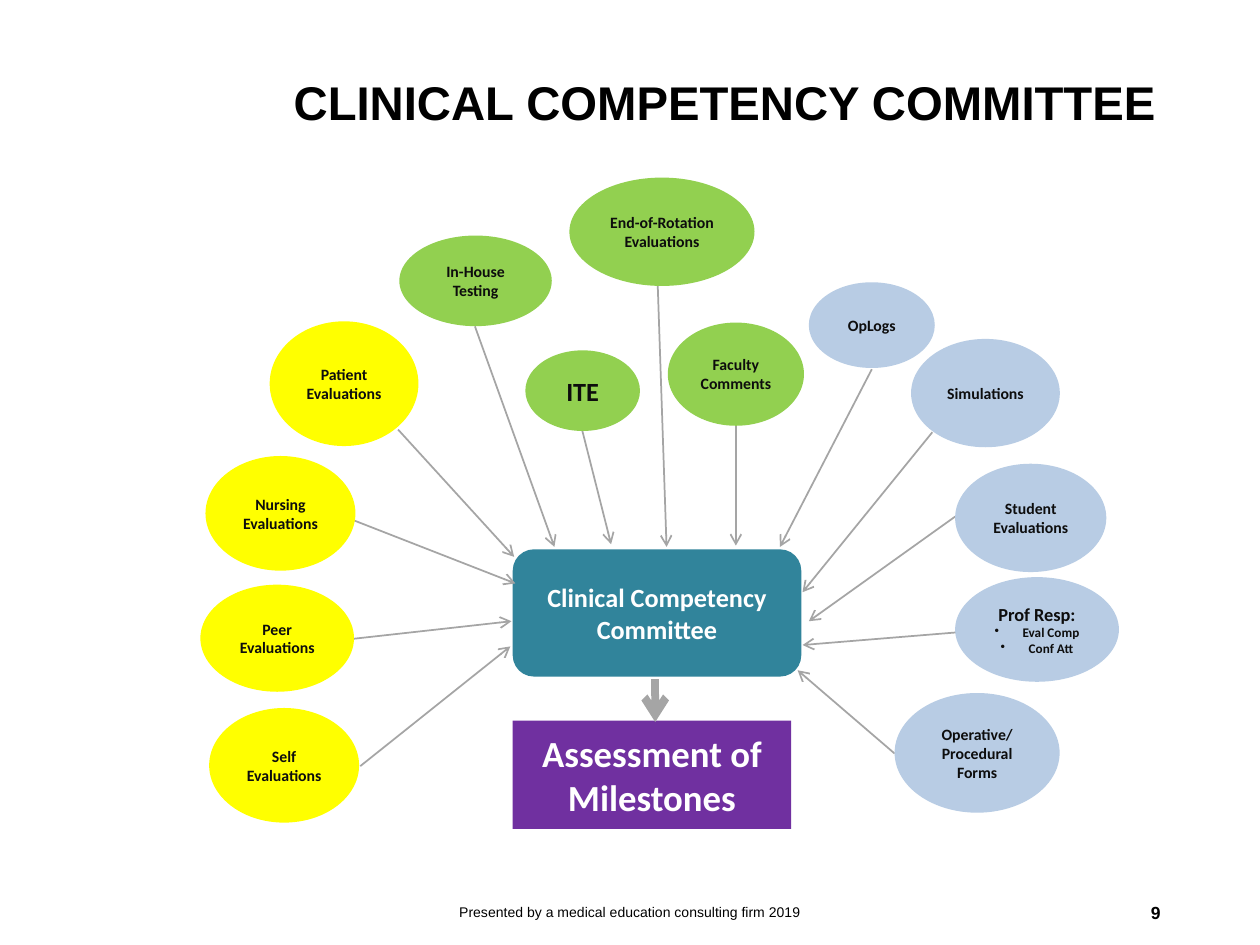
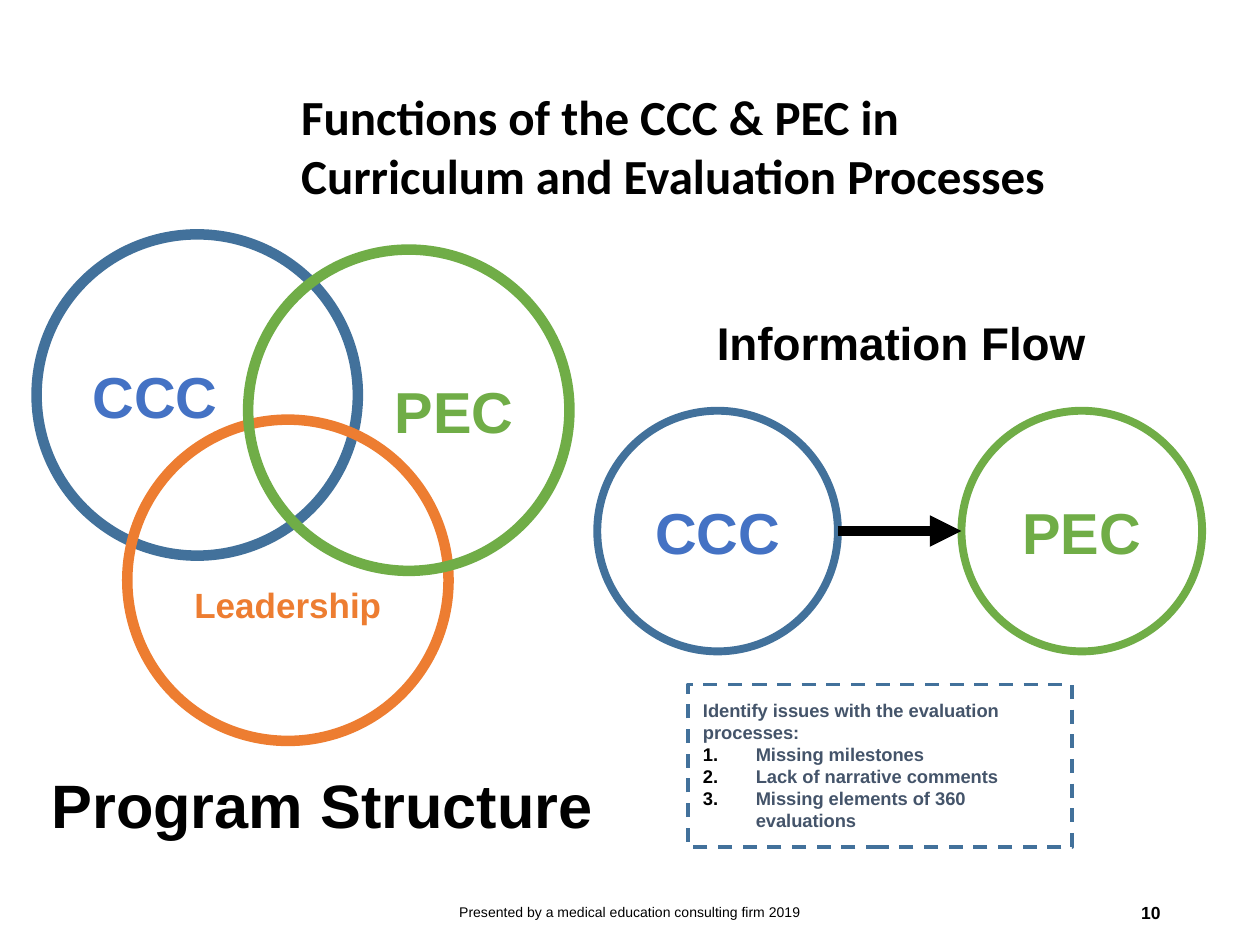
from lxml.etree import SubElement
from pptx import Presentation
from pptx.dml.color import RGBColor
from pptx.enum.dml import MSO_LINE
from pptx.enum.shapes import MSO_CONNECTOR, MSO_SHAPE as SHAPE
from pptx.enum.text import MSO_ANCHOR as ANCHOR, MSO_AUTO_SIZE, PP_ALIGN as ALIGN
from pptx.oxml.ns import qn
from pptx.util import Pt

BLACK, WHITE, INK, GRAY = "000000", "FFFFFF", "0D0D0D", "A5A5A5"
YELLOW, LIME, PALE_BLUE = "FFFF00", "92D050", "B8CCE4"
TEAL, PURPLE = "31849B", "7030A0"
STEEL, BLUE, GREEN, ORANGE, SLATE = "42719B", "4472C4", "70AD47", "ED7D31", "44546A"
FOOTER = "Presented by a medical education consulting firm 2019"
SHAPE_INSETS = (5, 3, 5, 3)
HEADING_INSETS = (5, 5, 5, 5)
TEXT_INSETS = (7.2, 3.6, 7.2, 3.6)


def rgb(color):
    """Turn a hex string into a colour."""
    return RGBColor.from_string(color)


def pts(*values):
    """Turn numbers into lengths in points."""
    return [Pt(round(v, 2)) for v in values]


def write(sp, text, size, color=BLACK, font="Arial", bold=True, align=ALIGN.CENTER,
          anchor=ANCHOR.MIDDLE, insets=SHAPE_INSETS, spacing=None):
    """Fill a shape with evenly formatted paragraphs."""
    tf = sp.text_frame
    tf.text = text
    tf.word_wrap = True
    tf.auto_size = MSO_AUTO_SIZE.NONE
    tf.vertical_anchor = anchor
    tf.margin_left, tf.margin_top, tf.margin_right, tf.margin_bottom = pts(*insets)
    for p in tf.paragraphs:
        p.alignment = align
        if spacing:
            p.line_spacing = spacing
        for r in p.runs:
            r.font.name, r.font.size, r.font.bold = font, Pt(size), bold
            r.font.color.rgb = rgb(color)
    return tf


def add_list_mark(p, margin, indent, tag, color=None, **attrs):
    """Give a paragraph a hanging bullet or number."""
    pPr = p._p.get_or_add_pPr()
    pPr.set("marL", str(Pt(margin)))
    pPr.set("indent", str(Pt(indent)))
    if color:
        SubElement(SubElement(pPr, qn("a:buClr")), qn("a:srgbClr"), val=color)
    SubElement(pPr, qn("a:" + tag), **attrs)


def add_figure(slide, kind, box, fill=None, line=None, width=1):
    """Add a flat preset shape."""
    sp = slide.shapes.add_shape(kind, *pts(*box))
    sp.shadow.inherit = False
    if fill:
        sp.fill.solid()
        sp.fill.fore_color.rgb = rgb(fill)
    else:
        sp.fill.background()
    if line:
        sp.line.color.rgb = rgb(line)
        sp.line.width = Pt(width)
    else:
        sp.line.fill.background()
    return sp


def add_arrow(slide, start, end, color=GRAY, width=1, head="arrow"):
    """Add a straight line with an arrowhead at its end."""
    c = slide.shapes.add_connector(MSO_CONNECTOR.STRAIGHT, *pts(*start, *end))
    c.line.color.rgb = rgb(color)
    c.line.width = Pt(width)
    SubElement(c.line._get_or_add_ln(), qn("a:tailEnd"), type=head)
    SubElement(c._element.spPr, qn("a:effectLst"))


def add_text(slide, box, text, size, **style):
    """Add a text box."""
    return write(slide.shapes.add_textbox(*pts(*box)), text, size, **style)


def add_page(prs, number, title, box, size, font, spacing=None):
    """Add a slide with its title, footer and number."""
    slide = prs.slides.add_slide(prs.slide_layouts[5])
    sp = slide.shapes.title
    sp.left, sp.top, sp.width, sp.height = pts(*box)
    write(sp, title, size, font=font, align=ALIGN.LEFT, anchor=ANCHOR.TOP,
          insets=TEXT_INSETS, spacing=spacing)
    add_text(slide, (238.3, 506.9, 243.4, 28.8), FOOTER, 8, bold=False, insets=TEXT_INSETS)
    add_text(slide, (508.3, 506.9, 162, 28.8), str(number), 10, align=ALIGN.RIGHT,
             insets=TEXT_INSETS)
    return slide


def draw_committee(slide, left, top):
    """Draw the evaluation sources feeding the committee and its result."""
    sources = [
        ("Patient Evaluations", YELLOW, (40.1, 82.6, 85, 71.3), (113.5, 144.5), (179.8, 217.2)),
        ("Nursing Evaluations", YELLOW, (3.4, 159.6, 85.7, 65.5), (88.3, 196.4), (180.5, 232.4)),
        ("Peer Evaluations", YELLOW, (0.5, 233.1, 87.8, 61.2), (88.3, 264), (178.3, 254)),
        ("Self\nEvaluations", YELLOW, (5.5, 303.6, 85.7, 65.5), (91.9, 336.8), (177.6, 268.4)),
        ("In-House\nTesting", LIME, (114.2, 33.6, 87.1, 51.8), (157.4, 85.5), (202.8, 211.5)),
        ("End-of-Rotation Evaluations", LIME, (211.4, 0.5, 105.8, 61.9), (261.8, 60.3),
         (266.9, 211.5)),
        ("ITE", LIME, (186.2, 99.2, 65.5, 46.1), (218.6, 144.5), (235.2, 210)),
        ("Faculty Comments", LIME, (267.6, 83.3, 77.8, 59), (306.5, 138), (306.5, 210.8)),
        ("OpLogs", PALE_BLUE, (348.2, 60.3, 72, 49), (384.2, 110), (331.7, 211.5)),
        ("Simulations", PALE_BLUE, (406.6, 92.7, 85, 61.9), (418.8, 146), (344.6, 237.4)),
        ("Student Evaluations", PALE_BLUE, (431.8, 164, 86.4, 61.9), (431.8, 194.2),
         (348.2, 254)),
        ("Prof Resp:\nEval Comp\nConf Att", PALE_BLUE, (431.8, 228.8, 93.6, 59.8),
         (432.5, 260.4), (344.6, 267.6)),
        ("Operative/\nProcedural\nForms", PALE_BLUE, (397.2, 295, 94.3, 68.4),
         (397.2, 329.6), (341.8, 282)),
    ]
    sizes = {"ITE": 15}

    def at(x, y, *size):
        return (left + x, top + y, *size)

    for kind, box, fill, text, size in [
        (SHAPE.ROUNDED_RECTANGLE, (179, 212.9, 164.9, 72.7), TEAL,
         "Clinical Competency Committee", 15),
        (SHAPE.RECTANGLE, (179, 310.8, 159.1, 61.9), PURPLE, "Assessment of Milestones", 21),
    ]:
        write(add_figure(slide, kind, at(*box), fill), text, size, WHITE, "Calibri")
    add_arrow(slide, at(260.4, 287.1), at(260.4, 311.6), width=4.5)
    for text, fill, box, start, end in sources:
        add_arrow(slide, at(*start), at(*end))
        sp = add_figure(slide, SHAPE.OVAL, at(*box), fill)
        tf = write(sp, text, sizes.get(text, 9), INK, "Calibri")
        if text.startswith("Prof Resp"):
            heading, *items = tf.paragraphs
            heading.runs[0].font.size = Pt(10.5)
            for p in items:
                add_list_mark(p, 16, -16, "buChar", char="•")
                p.runs[0].font.size = Pt(7.5)


def draw_structure(slide, left, top):
    """Draw the three overlapping rings with their caption."""
    diameter = 183.6
    rings = [
        ("CCC", 0, 0, STEEL, BLUE, 33, ALIGN.LEFT, SHAPE_INSETS),
        ("Leadership", 51.8, 105.9, ORANGE, ORANGE, 20, ALIGN.CENTER, (5, 31, 5, 3)),
        ("PEC", 120.9, 8.7, GREEN, GREEN, 33, ALIGN.RIGHT, SHAPE_INSETS),
    ]
    for text, x, y, line, color, size, align, insets in rings:
        sp = add_figure(slide, SHAPE.OVAL, (left + x, top + y, diameter, diameter),
                        line=line, width=6)
        write(sp, text, size, color, align=align, insets=insets)
    add_text(slide, (left + 3.6, top + 298.1, 385.2, 60.5), "Program Structure", 35,
             align=ALIGN.LEFT, insets=HEADING_INSETS, spacing=0.9)


def draw_flow(slide, left, top):
    """Draw the flow between two rings and the list of issues."""
    diameter, pitch, ring_top = 137.5, 208.1, top + 76.3
    middle = ring_top + diameter / 2
    add_text(slide, (left + 63.3, top, 255.6, 78.5), "Information Flow", 26.2,
             align=ALIGN.LEFT, insets=HEADING_INSETS, spacing=0.9)
    for i, (text, line, color) in enumerate([("CCC", STEEL, BLUE), ("PEC", GREEN, GREEN)]):
        sp = add_figure(slide, SHAPE.OVAL, (left + i * pitch, ring_top, diameter, diameter),
                        line=line, width=4.5)
        write(sp, text, 33, color)
    add_arrow(slide, (left + diameter, middle), (left + pitch, middle), BLACK, 6, "triangle")
    sp = add_figure(slide, SHAPE.RECTANGLE, (left + 51.8, top + 232.6, 219.6, 92.9),
                    line=STEEL, width=2)
    sp.line.dash_style = MSO_LINE.DASH
    issues = ("Identify issues with the evaluation processes:\nMissing milestones\n"
              "Lack of narrative comments\nMissing elements of 360 evaluations")
    heading, *items = write(sp, issues, 10.5, SLATE, align=ALIGN.LEFT).paragraphs
    add_list_mark(heading, 3.6, 0, "buNone")
    for p in items:
        add_list_mark(p, 33.8, -30.2, "buAutoNum", BLACK, type="arabicPeriod")


def main():
    """Build both slides and save them."""
    prs = Presentation()
    prs.slide_width, prs.slide_height = Pt(720), Pt(540)
    slide = add_page(prs, 9, "CLINICAL COMPETENCY COMMITTEE", (160.6, 41.8, 541.4, 78.5),
                     27, "Arial", 0.9)
    draw_committee(slide, 114, 101)
    slide = add_page(prs, 10, "Functions of the CCC & PEC in\nCurriculum and Evaluation Processes",
                     (164.9, 46.1, 491.8, 74.9), 28, "Calibri")
    draw_structure(slide, 20.9, 133.9)
    draw_flow(slide, 341.3, 158.4)
    prs.save("out.pptx")


if __name__ == "__main__":
    main()
